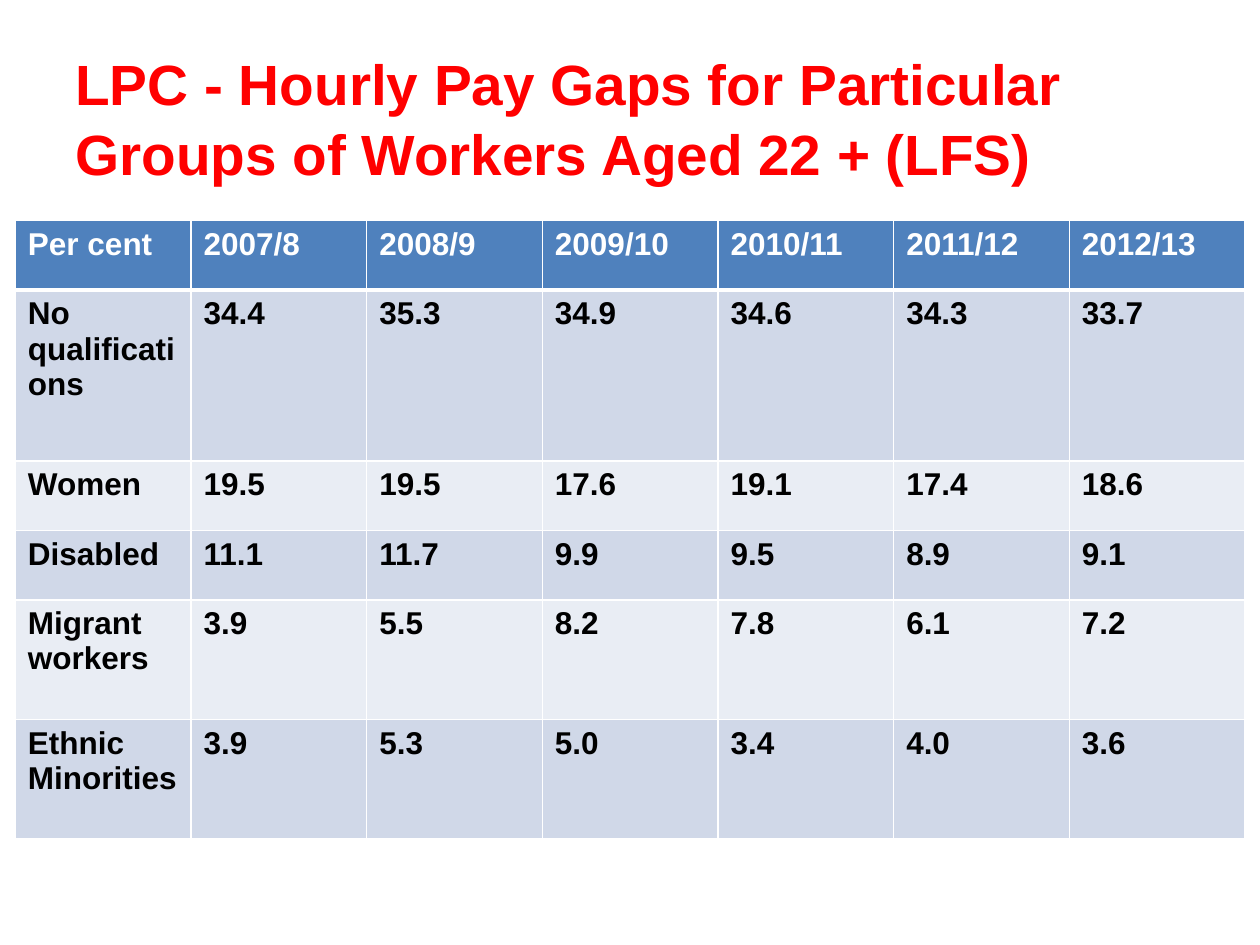
from dataclasses import dataclass

from lxml import etree
from pptx import Presentation
from pptx.dml.color import RGBColor
from pptx.enum.text import MSO_ANCHOR
from pptx.oxml.ns import qn
from pptx.util import Pt

MIDDLE = MSO_ANCHOR.MIDDLE
BLANK_LAYOUT = 6


@dataclass(frozen=True)
class Theme:
    font: str = "Arial"
    title_size: float = 32.4
    table_size: float = 18
    title: str = "FF0000"
    header_text: str = "FFFFFF"
    body_text: str = "000000"
    header_fill: str = "4F81BD"
    band_fills: tuple = ("D0D8E8", "E9EDF4")
    border: str = "FFFFFF"
    thin: float = 1
    thick: float = 3


class SlideBuilder:
    def __init__(self, slide, theme):
        self.slide = slide
        self.theme = theme

    def style(self, paragraph, size, color):
        font = paragraph.font
        font.name = self.theme.font
        font.size = Pt(size)
        font.bold = True
        font.color.rgb = RGBColor.from_string(color)

    def title(self, text, left, top, width, height):
        shape = self.slide.shapes.add_textbox(Pt(left), Pt(top), Pt(width), Pt(height))
        frame = shape.text_frame
        frame.word_wrap = True
        frame.vertical_anchor = MIDDLE
        frame.text = text
        paragraph = frame.paragraphs[0]
        paragraph.line_spacing = 1.04
        self.style(paragraph, self.theme.title_size, self.theme.title)

    def border(self, cell, side, width):
        properties = cell._tc.get_or_add_tcPr()
        line = etree.SubElement(properties, qn(f"a:ln{side}"), w=str(Pt(width)))
        fill = etree.SubElement(line, qn("a:solidFill"))
        etree.SubElement(fill, qn("a:srgbClr"), val=self.theme.border)

    def cell(self, cell, text, row):
        theme = self.theme
        header = row == 0
        widths = {"L": theme.thin, "R": theme.thin,
                  "T": theme.thick if row == 1 else theme.thin,
                  "B": theme.thick if header else theme.thin}
        for side, width in widths.items():
            self.border(cell, side, width)
        fill = theme.header_fill if header else theme.band_fills[(row - 1) % 2]
        cell.fill.solid()
        cell.fill.fore_color.rgb = RGBColor.from_string(fill)
        cell.text = text
        color = theme.header_text if header else theme.body_text
        self.style(cell.text_frame.paragraphs[0], theme.table_size, color)

    def table(self, rows, left, top, column_width, row_heights):
        columns = len(rows[0])
        table = self.slide.shapes.add_table(
            len(rows), columns, Pt(left), Pt(top),
            Pt(column_width * columns), Pt(sum(row_heights))).table
        for column in table.columns:
            column.width = Pt(column_width)
        for index, (values, height) in enumerate(zip(rows, row_heights)):
            table.rows[index].height = Pt(height)
            for column, text in enumerate(values):
                self.cell(table.cell(index, column), text, index)


PAY_GAPS = [
    ("Per cent", "2007/8", "2008/9", "2009/10", "2010/11", "2011/12", "2012/13"),
    ("No qualifications", "34.4", "35.3", "34.9", "34.6", "34.3", "33.7"),
    ("Women", "19.5", "19.5", "17.6", "19.1", "17.4", "18.6"),
    ("Disabled", "11.1", "11.7", "9.9", "9.5", "8.9", "9.1"),
    ("Migrant workers", "3.9", "5.5", "8.2", "7.8", "6.1", "7.2"),
    ("Ethnic Minorities", "3.9", "5.3", "5.0", "3.4", "4.0", "3.6"),
]


def main():
    presentation = Presentation()
    presentation.slide_width = Pt(720)
    presentation.slide_height = Pt(540)
    slide = presentation.slides.add_slide(presentation.slide_layouts[BLANK_LAYOUT])
    builder = SlideBuilder(slide, Theme())
    builder.title("LPC - Hourly Pay Gaps for Particular Groups of Workers Aged 22 + (LFS)",
                  36, 21.6, 648, 90)
    builder.table(PAY_GAPS, 8.8, 126, 100.4, (39.7, 97.7, 39.7, 39.7, 68.4, 68.4))
    presentation.save("out.pptx")


if __name__ == "__main__":
    main()
